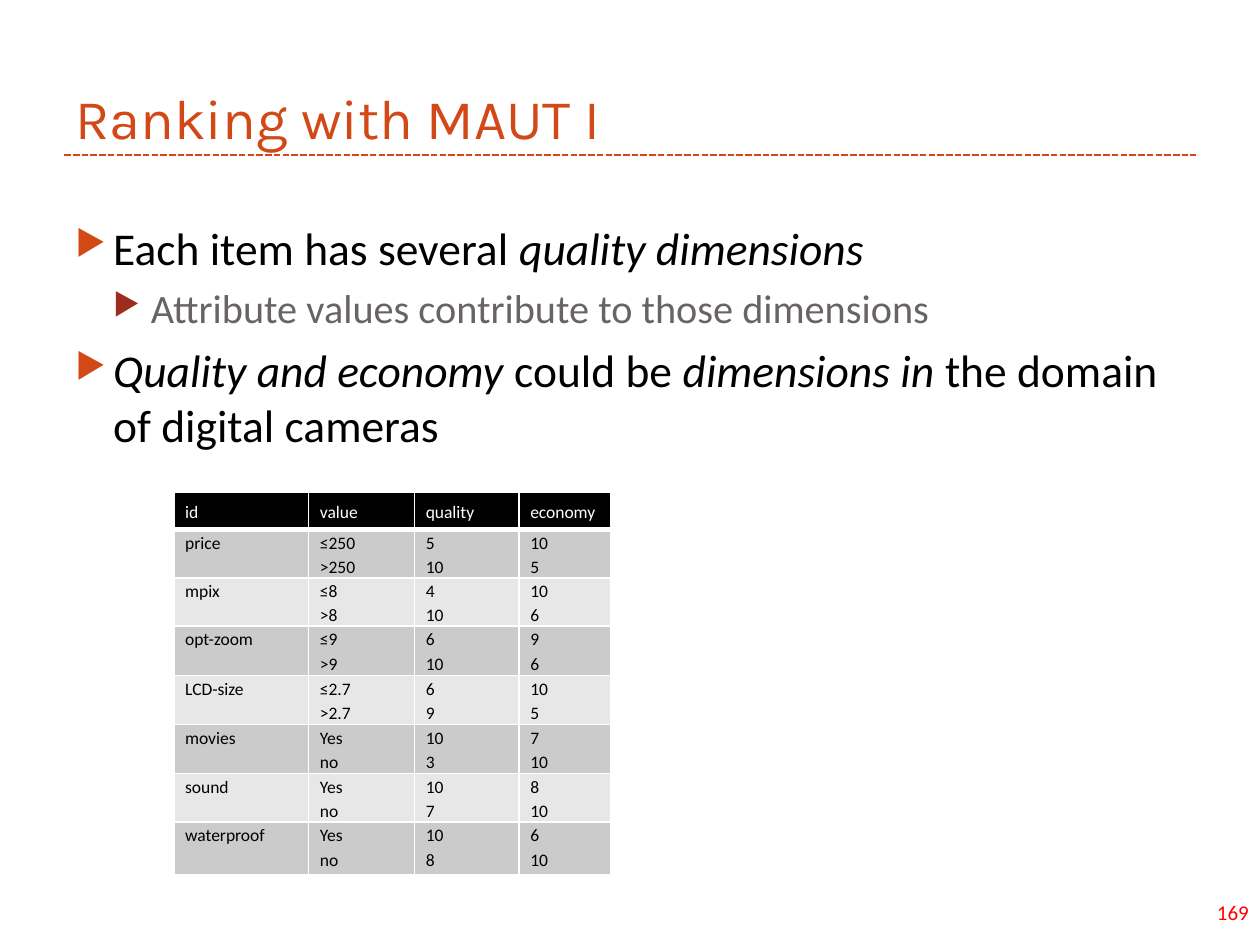
import pptx
import pptx.dml.color
import pptx.enum.dml
import pptx.enum.shapes
import pptx.enum.text
import pptx.oxml.ns
import pptx.util
from lxml import etree
from pptx.util import Inches, Pt

ORANGE, RED_BROWN, GREY, BLACK, WHITE = "D34817", "9B2D1F", "696464", "000000", "FFFFFF"
LEVELS = [
    {"size": 26, "color": BLACK, "bullet": ORANGE, "before": 6},
    {"size": 23, "color": GREY, "bullet": RED_BROWN, "before": 5},
]
BULLETS = [
    (0, [("Each item has several ", False), ("quality dimensions", True)]),
    (1, [("Attribute values contribute to those dimensions", False)]),
    (0, [("Quality and economy ", True), ("could be ", False), ("dimensions in ", True),
         ("the domain of digital cameras", False)]),
]
HEADER = ["id", "value", "quality", "economy"]
ROWS = [
    ["price", "≤250\n>250", "5\n10", "10\n5"],
    ["mpix", "≤8\n>8", "4\n10", "10\n6"],
    ["opt-zoom", "≤9\n>9", "6\n10", "9\n6"],
    ["LCD-size", "≤2.7\n>2.7", "6\n9", "10\n5"],
    ["movies", "Yes\nno", "10\n3", "7\n10"],
    ["sound", "Yes\nno", "10\n7", "8\n10"],
    ["waterproof", "Yes\nno", "10\n8", "6\n10"],
]
COLUMN_WIDTHS = [1.07, 0.84, 0.83, 0.73]
ROW_HEIGHTS = [0.28, 0.35, 0.37, 0.39, 0.39, 0.39, 0.35, 0.42]


def rgb(color):
    """Turn a hex string into a colour."""
    return pptx.dml.color.RGBColor.from_string(color)


def add_element(parent, tag, **attributes):
    """Append a DrawingML element to its parent."""
    return etree.SubElement(parent, pptx.oxml.ns.qn(tag), attributes)


def style(font, size, color, name="Calibri"):
    """Set the typeface, size and colour of a font."""
    font.name, font.size = name, Pt(size)
    font.color.rgb = rgb(color)


def add_title(s, left, top, width, height):
    """Place the title and the dashed rule beneath it."""
    sp = s.shapes.title
    sp.left, sp.top, sp.width, sp.height = map(Inches, (left, top, width, height))
    tf = sp.text_frame
    tf.text = "Ranking with MAUT I"
    tf.auto_size = pptx.enum.text.MSO_AUTO_SIZE.NONE
    tf.vertical_anchor = pptx.enum.text.MSO_ANCHOR.BOTTOM
    p = tf.paragraphs[0]
    p.alignment = pptx.enum.text.PP_ALIGN.LEFT
    style(p.font, 32, ORANGE, "Karla")

    y = Inches(top + height - 0.02)
    rule = s.shapes.add_connector(
        pptx.enum.shapes.MSO_CONNECTOR.STRAIGHT,
        Inches(left + 0.01), y, Inches(left + width - 0.01), y)
    rule.line.color.rgb = rgb(ORANGE)
    rule.line.width = Pt(1.25)
    rule.line.dash_style = pptx.enum.dml.MSO_LINE.SQUARE_DOT
    add_element(rule._element.spPr, "a:effectLst")


def add_bullets(s, left, top, width, height):
    """Place the two-level bullet list."""
    tf = s.shapes.add_textbox(*map(Inches, (left, top, width, height))).text_frame
    tf.word_wrap = True
    for i, (level, runs) in enumerate(BULLETS):
        p = tf.add_paragraph() if i else tf.paragraphs[0]
        look = LEVELS[level]
        p.level = level
        if i:
            p.space_before = Pt(look["before"])
        pPr = p._p.get_or_add_pPr()
        pPr.set("marL", str(Inches(0.3 * (level + 1))))
        pPr.set("indent", str(Inches(-0.3)))
        add_element(add_element(pPr, "a:buClr"), "a:srgbClr", val=look["bullet"])
        add_element(pPr, "a:buSzPct", val="76000")
        add_element(pPr, "a:buChar", char="▶")
        style(p.font, look["size"], look["color"])
        for text, italic in runs:
            r = p.add_run()
            r.text = text
            r.font.italic = italic


def fill_cell(cell, text, row):
    """Write and format one table cell."""
    header = row == 0
    cell.margin_left = cell.margin_right = Inches(0.09)
    cell.margin_top = cell.margin_bottom = Inches(0.05 if header else 0)
    cell.text = text
    for p in cell.text_frame.paragraphs:
        p.line_spacing = 1.15
        style(p.font, 10, WHITE if header else BLACK)
    p.space_after = Pt(10)

    widths = {"L": 1, "R": 1, "T": 3 if row == 1 else 1, "B": 3 if header else 1}
    for side, width in widths.items():
        ln = add_element(cell._tc.get_or_add_tcPr(), f"a:ln{side}", w=str(Pt(width)))
        add_element(add_element(ln, "a:solidFill"), "a:srgbClr", val=WHITE)
    cell.fill.solid()
    cell.fill.fore_color.rgb = rgb(BLACK if header else "CBCBCB" if row % 2 else "E7E7E7")


def add_ratings(s, left, top, width, height):
    """Place the table of ratings by attribute value."""
    data = [HEADER] + ROWS
    table = s.shapes.add_table(
        len(data), len(HEADER), *map(Inches, (left, top, width, height))).table
    for column, size in zip(table.columns, COLUMN_WIDTHS):
        column.width = Inches(size)
    for row, size in zip(table.rows, ROW_HEIGHTS):
        row.height = Inches(size)
    for i, texts in enumerate(data):
        for j, text in enumerate(texts):
            fill_cell(table.cell(i, j), text, i)


def add_page_number(s, left, top, width, height):
    """Place the page number at the right of its box."""
    tf = s.shapes.add_textbox(*map(Inches, (left, top, width, height))).text_frame
    tf.word_wrap = True
    tf.text = "169"
    p = tf.paragraphs[0]
    p.alignment = pptx.enum.text.PP_ALIGN.RIGHT
    style(p.font, 12, "FF0000")


def main():
    """Build the slide and save it."""
    prs = pptx.Presentation()
    prs.slide_width, prs.slide_height = Inches(10), Inches(7.5)
    s = prs.slides.add_slide(prs.slide_layouts[5])
    add_title(s, 0.5, 0.17, 9, 1.08)
    add_bullets(s, 0.5, 1.7, 9, 5.4)
    add_ratings(s, 1.38, 3.91, sum(COLUMN_WIDTHS), sum(ROW_HEIGHTS))
    add_page_number(s, 8.73, 7.09, 1.28, 0.3)
    prs.save("out.pptx")


if __name__ == "__main__":
    main()
